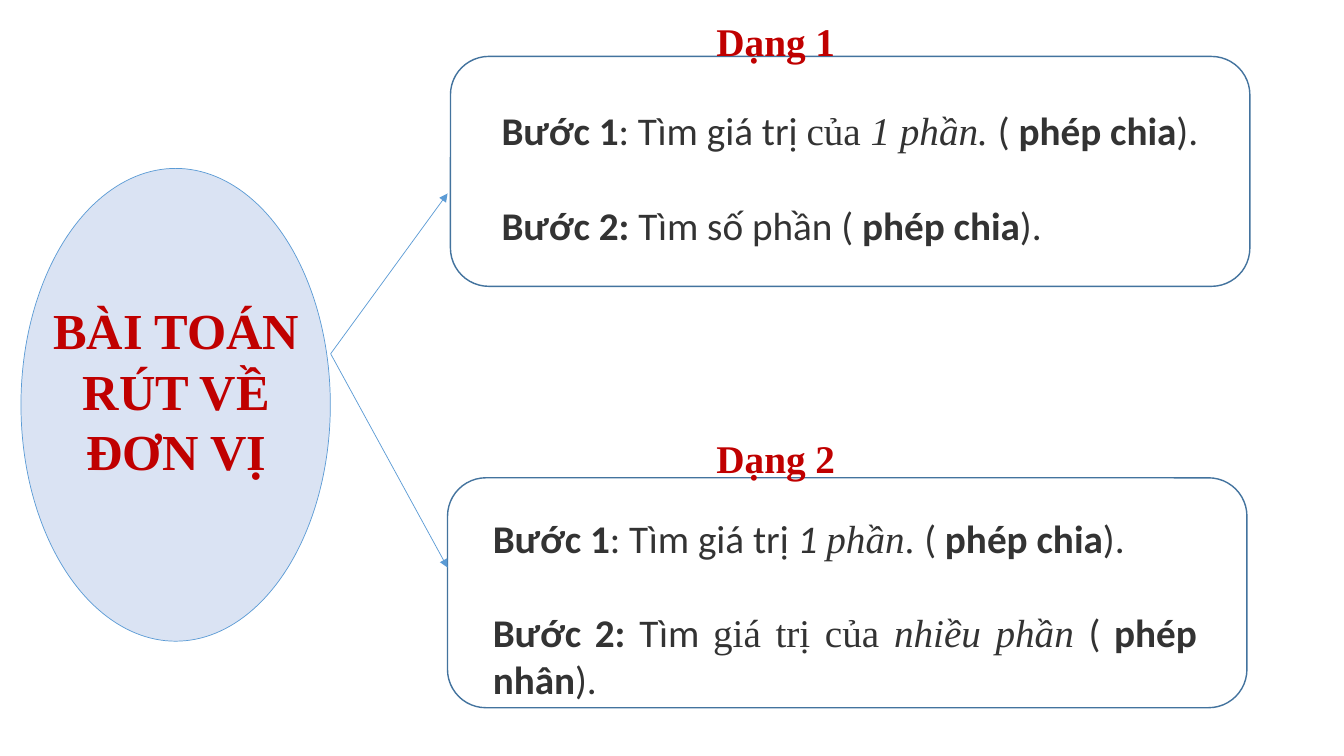
from lxml.etree import SubElement
from pptx import Presentation
from pptx.dml.color import RGBColor
from pptx.enum.shapes import MSO_CONNECTOR, MSO_SHAPE
from pptx.enum.text import MSO_ANCHOR, MSO_AUTO_SIZE, PP_ALIGN
from pptx.oxml.ns import qn
from pptx.util import Pt

SERIF, SANS = "Times New Roman", "Calibri"
RED, GREY, BLUE, DARK_BLUE, PALE = "C00000", "333333", "5B9BD5", "43739E", "DAE3F3"

FORM_1 = [
    [("Bước 1", "b"), (": Tìm giá trị ", ""), ("của ", "t"), ("1 phần. ", "ti"),
     ("( ", ""), ("phép chia", "b"), (").", "")],
    [("Bước 2:", "b"), (" Tìm số phần ( ", ""), ("phép chia", "b"), (").", "")],
]
FORM_2 = [
    [("Bước 1", "b"), (": Tìm giá trị ", ""), ("1 ", "i"), ("phần", "ti"),
     (". ", "t"), ("( ", ""), ("phép chia", "b"), (").", "")],
    [("Bước 2: ", "b"), ("Tìm ", ""), ("giá trị của ", "t"), ("nhiều phần ", "ti"),
     ("( ", ""), ("phép nhân", "b"), (").", "")],
]


def color(value):
    return RGBColor.from_string(value)


def style(font, size, name, rgb, bold=False, italic=False):
    font.size, font.name, font.bold, font.italic = Pt(size), name, bold, italic
    font.color.rgb = color(rgb)


def add_outline(s, kind, box, line, width, fill=None):
    sp = s.shapes.add_shape(kind, *map(Pt, box))
    sp.shadow.inherit = False
    if fill:
        sp.fill.solid()
        sp.fill.fore_color.rgb = color(fill)
    else:
        sp.fill.background()
    sp.line.color.rgb = color(line)
    sp.line.width = Pt(width)
    return sp


def add_text(s, box):
    tf = s.shapes.add_textbox(*map(Pt, box)).text_frame
    tf.word_wrap = True
    return tf


def add_topic(s, x, y, w, h):
    sp = add_outline(s, MSO_SHAPE.OVAL, (x, y, w, h), BLUE, 0.5, PALE)
    title = s.shapes.title
    title.element.addprevious(sp.element)
    title.left, title.top = Pt(x + 11.5), Pt(y + 90)
    title.width, title.height = Pt(w - 22), Pt(138)
    tf = title.text_frame
    tf.text = "BÀI TOÁN RÚT VỀ ĐƠN VỊ"
    tf.word_wrap = True
    tf.auto_size = MSO_AUTO_SIZE.NONE
    tf.vertical_anchor = MSO_ANCHOR.TOP
    p = tf.paragraphs[0]
    p.alignment = PP_ALIGN.CENTER
    style(p.runs[0].font, 36, SERIF, RED, bold=True)


def add_form(s, x, y, w, h, name, name_y, steps, dx, dy, steps_w):
    tf = add_text(s, (x + dx, y + dy, steps_w, h - dy))
    for i, step in enumerate(steps):
        p = tf.add_paragraph() if i else tf.paragraphs[0]
        p.alignment = PP_ALIGN.JUSTIFY
        if i:
            p.space_before = Pt(34)
        for text, marks in step:
            r = p.add_run()
            r.text = text
            style(r.font, 28, SERIF if "t" in marks else SANS, GREY, "b" in marks, "i" in marks)
    add_outline(s, MSO_SHAPE.ROUNDED_RECTANGLE, (x, y, w, h), DARK_BLUE, 1)
    tf = add_text(s, (504.7, name_y, 197.3, 41))
    tf.text = name
    style(tf.paragraphs[0].runs[0].font, 28, SERIF, RED, bold=True)


def add_arrow(s, x1, y1, x2, y2):
    c = s.shapes.add_connector(MSO_CONNECTOR.STRAIGHT, *map(Pt, (x1, y1, x2, y2)))
    c.line.color.rgb = color(BLUE)
    c.line.width = Pt(0.5)
    SubElement(c.line._get_or_add_ln(), qn("a:tailEnd"), type="triangle")
    SubElement(c.element.spPr, qn("a:effectLst"))


def main():
    prs = Presentation()
    prs.slide_width, prs.slide_height = Pt(960), Pt(540)
    s = prs.slides.add_slide(prs.slide_layouts[5])
    add_topic(s, 15, 120.3, 221, 337.7)
    add_form(s, 321.8, 40.3, 571, 164.2, "Dạng 1", 8.6, FORM_1, 29.4, 32.4, 539.5)
    add_form(s, 319.7, 341.3, 571, 164.2, "Dạng 2", 306.7, FORM_2, 25.2, 22.3, 517)
    for y in (138.2, 405.4):
        add_arrow(s, 236.2, 252.7, 319.7, y)
    prs.save("out.pptx")


if __name__ == "__main__":
    main()
